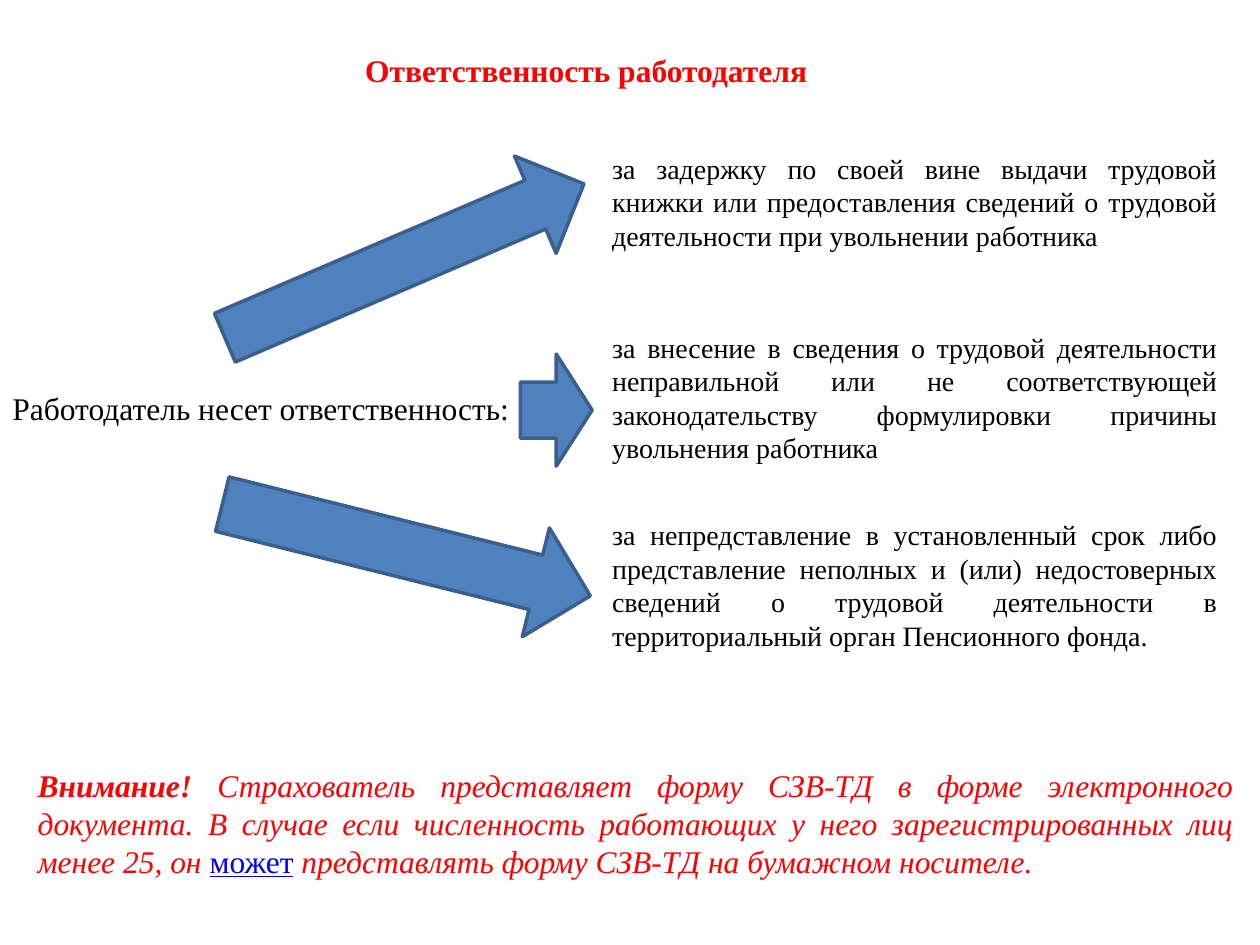
"""Build a slide on the employer's liability for labour records."""
from dataclasses import dataclass

from pptx import Presentation
from pptx.dml.color import RGBColor
from pptx.enum import shapes, text
from pptx.util import Inches, Pt


@dataclass(frozen=True)
class Theme:
    """Colours, font and type sizes of the slide."""
    font: str = "Times New Roman"
    ink: RGBColor = RGBColor(0x00, 0x00, 0x00)
    alert: RGBColor = RGBColor(0xFF, 0x00, 0x00)
    link: RGBColor = RGBColor(0x00, 0x00, 0xFF)
    arrow: RGBColor = RGBColor(0x4F, 0x81, 0xBD)
    outline: RGBColor = RGBColor(0x3A, 0x5F, 0x8C)
    outline_width: Pt = Pt(2)
    large: Pt = Pt(18)
    body: Pt = Pt(16)


THEME = Theme()

REASONS = [
    (1.15, 0.91, "за задержку по своей вине выдачи трудовой книжки или "
     "предоставления сведений о трудовой деятельности при увольнении работника"),
    (2.57, 1.18, "за внесение в сведения о трудовой деятельности неправильной "
     "или не соответствующей законодательству формулировки причины увольнения работника"),
    (4.06, 1.18, "за непредставление в установленный срок либо представление "
     "неполных и (или) недостоверных сведений о трудовой деятельности "
     "в территориальный орган Пенсионного фонда."),
]

ARROWS = [
    ((1.66, 1.65, 3.1, 0.84), 336.8),
    ((1.72, 3.92, 3.01, 0.89), 14),
    ((4.13, 2.81, 0.57, 0.89), 0),
]


def add_text(s, box, wrap=True):
    """Add a text box and return its first paragraph, justified if it wraps."""
    tf = s.shapes.add_textbox(*map(Inches, box)).text_frame
    tf.word_wrap = wrap
    tf.auto_size = text.MSO_AUTO_SIZE.SHAPE_TO_FIT_TEXT
    p = tf.paragraphs[0]
    if wrap:
        p.alignment = text.PP_ALIGN.JUSTIFY
    return p


def add_run(p, words, size, color, bold=False, italic=False, underline=False):
    """Append a formatted run to a paragraph."""
    r = p.add_run()
    r.text = words
    font = r.font
    font.name, font.size = THEME.font, size
    font.bold, font.italic, font.underline = bold, italic, underline
    font.color.rgb = color


def add_arrow(s, box, rotation):
    """Add a block arrow turned by the given degrees."""
    sp = s.shapes.add_shape(shapes.MSO_SHAPE.RIGHT_ARROW, *map(Inches, box))
    sp.rotation = rotation
    sp.shadow.inherit = False
    sp.fill.solid()
    sp.fill.fore_color.rgb = THEME.arrow
    sp.line.color.rgb = THEME.outline
    sp.line.width = THEME.outline_width


def add_warning(s):
    """Add the closing note with its highlighted words."""
    p = add_text(s, (0.2, 6.03, 9.69, 1.01))
    add_run(p, "Внимание! ", THEME.large, THEME.alert, bold=True, italic=True)
    add_run(p, "Страхователь представляет форму СЗВ-ТД в форме электронного "
            "документа. В случае если численность работающих у него "
            "зарегистрированных лиц менее 25, он ",
            THEME.large, THEME.alert, italic=True)
    add_run(p, "может", THEME.large, THEME.link, underline=True)
    add_run(p, " представлять форму СЗВ-ТД на бумажном носителе.",
            THEME.large, THEME.alert, italic=True)


def main():
    """Build and save the slide."""
    prs = Presentation()
    prs.slide_width, prs.slide_height = Inches(10), Inches(7.5)
    s = prs.slides.add_slide(prs.slide_layouts[6])
    p = add_text(s, (2.8, 0.36, 3.75, 0.4), wrap=False)
    add_run(p, "Ответственность работодателя", THEME.large, THEME.alert, bold=True)
    p = add_text(s, (0, 3.04, 4.19, 0.4), wrap=False)
    add_run(p, "Работодатель несет ответственность:", THEME.large, THEME.ink)
    for top, height, reason in REASONS:
        p = add_text(s, (4.76, top, 5, height))
        add_run(p, reason, THEME.body, THEME.ink)
    add_warning(s)
    for box, rotation in ARROWS:
        add_arrow(s, box, rotation)
    prs.save("out.pptx")


if __name__ == "__main__":
    main()
